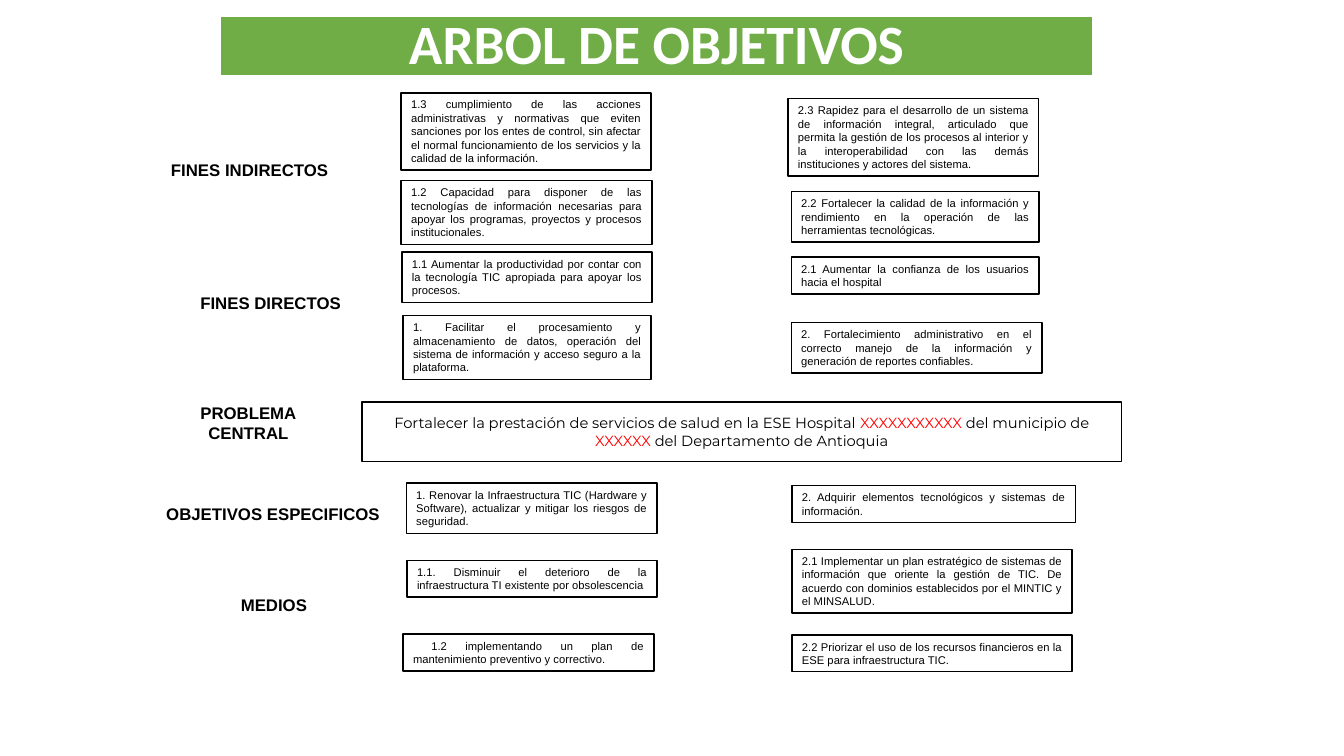
from dataclasses import dataclass

from pptx import Presentation
from pptx.dml.color import RGBColor
from pptx.enum.shapes import MSO_SHAPE
from pptx.enum.text import MSO_ANCHOR, MSO_AUTO_SIZE, PP_ALIGN
from pptx.shapes.autoshape import Shape
from pptx.slide import Slide
from pptx.util import Cm, Pt

COLORS = {"green": "70AD47", "white": "FFFFFF", "black": "000000", "red": "FF0000"}
TITLE_FONT = {"name": "Calibri", "size": Pt(39.6), "bold": True}
LABEL_FONT = {"name": "Arial", "size": Pt(12), "bold": True}
CARD_FONT = {"name": "Arial", "size": Pt(8), "bold": False}
CENTRAL_FONT = {"name": "Montserrat", "size": Pt(10.5), "bold": False}
LINE_HEIGHT = 0.34
VERTICAL_INSETS = 0.25


@dataclass(frozen=True)
class Label:
    left: float
    top: float
    width: float
    lines: tuple[str, ...]


@dataclass(frozen=True)
class Card:
    left: float
    top: float
    width: float
    line_count: int
    text: str
    first_indent: float = 0


LABELS = [
    Label(4.06, 3.91, 4.52, ("FINES INDIRECTOS",)),
    Label(4.8, 7.24, 4.22, ("FINES DIRECTOS",)),
    Label(4.8, 10.03, 3.07, ("PROBLEMA", "CENTRAL")),
    Label(3.94, 12.57, 5.97, ("OBJETIVOS ESPECIFICOS",)),
    Label(5.82, 14.86, 2.21, ("MEDIOS",)),
]

CARDS = [
    # Left branch
    Card(10.11, 2.34, 6.3, 5, "1.3 cumplimiento de las acciones administrativas y normativas que "
         "eviten sanciones por los entes de control, sin afectar el normal funcionamiento de los "
         "servicios y la calidad de la información."),
    Card(10.11, 4.55, 6.32, 4, "1.2 Capacidad para disponer de las tecnologías de información "
         "necesarias para apoyar los programas, proyectos y procesos institucionales."),
    Card(10.13, 6.35, 6.3, 3, "1.1 Aumentar la productividad por contar con la tecnología TIC "
         "apropiada para apoyar los procesos."),
    Card(10.16, 7.95, 6.25, 4, "1. Facilitar el procesamiento y almacenamiento de datos, operación "
         "del sistema de información y acceso seguro a la plataforma."),
    Card(10.24, 12.17, 6.32, 3, "1. Renovar la Infraestructura TIC (Hardware y Software), "
         "actualizar y mitigar los riesgos de seguridad."),
    Card(10.26, 14.12, 6.3, 2, "1.1. Disminuir el deterioro de la infraestructura TI existente "
         "por obsolescencia"),
    Card(10.16, 15.98, 6.32, 2, "1.2 implementando un plan de mantenimiento preventivo y "
         "correctivo.", first_indent=0.46),
    # Right branch
    Card(19.86, 2.49, 6.32, 5, "2.3 Rapidez para el desarrollo de un sistema de información "
         "integral, articulado que permita la gestión de los procesos al interior y la "
         "interoperabilidad con las demás instituciones y actores del sistema."),
    Card(19.94, 4.83, 6.25, 3, "2.2 Fortalecer la calidad de la información y rendimiento en la "
         "operación de las herramientas tecnológicas."),
    Card(19.94, 6.48, 6.25, 2, "2.1 Aumentar la confianza de los usuarios hacia el hospital"),
    Card(19.94, 8.13, 6.32, 3, "2. Fortalecimiento administrativo en el correcto manejo de la "
         "información y generación de reportes confiables."),
    Card(19.96, 12.24, 7.14, 2, "2. Adquirir elementos tecnológicos y sistemas de información."),
    Card(19.96, 13.84, 7.06, 4, "2.1 Implementar un plan estratégico de sistemas de información "
         "que oriente la gestión de TIC. De acuerdo con dominios establecidos por el MINTIC y el "
         "MINSALUD."),
    Card(19.96, 16, 7.06, 2, "2.2 Priorizar el uso de los recursos financieros en la ESE para "
         "infraestructura TIC."),
]

CENTRAL_RUNS = [
    ("Fortalecer la prestación de servicios de salud en la ESE Hospital ", "black"),
    ("XXXXXXXXXXX", "red"),
    (" del municipio de ", "black"),
    ("XXXXXX", "red"),
    (" del Departamento de Antioquia", "black"),
]


def rgb(color: str) -> RGBColor:
    return RGBColor.from_string(COLORS[color])


def add_run(paragraph, text: str, font_format: dict, color: str) -> None:
    run = paragraph.add_run()
    run.text = text
    for attribute, value in font_format.items():
        setattr(run.font, attribute, value)
    run.font.color.rgb = rgb(color)


def add_box(slide: Slide, left: float, top: float, width: float, height: float,
            fill: str = "white", line: str = "black", line_width: float = 1) -> Shape:
    shape = slide.shapes.add_shape(
        MSO_SHAPE.RECTANGLE, Cm(left), Cm(top), Cm(width), Cm(height))
    shape.shadow.inherit = False
    shape.fill.solid()
    shape.fill.fore_color.rgb = rgb(fill)
    shape.line.color.rgb = rgb(line)
    shape.line.width = Pt(line_width)
    shape.text_frame.word_wrap = True
    shape.text_frame.vertical_anchor = MSO_ANCHOR.MIDDLE
    shape.text_frame.paragraphs[0].alignment = PP_ALIGN.CENTER
    return shape


def add_title(slide: Slide) -> None:
    shape = add_box(slide, 5.54, 0.41, 22.02, 1.52, "green", "white", 1.5)
    paragraph = shape.text_frame.paragraphs[0]
    paragraph.line_spacing = 0.9
    add_run(paragraph, "ARBOL DE OBJETIVOS", TITLE_FONT, "white")


def add_central_problem(slide: Slide) -> None:
    shape = add_box(slide, 9.12, 10.13, 19.15, 1.5)
    for text, color in CENTRAL_RUNS:
        add_run(shape.text_frame.paragraphs[0], text, CENTRAL_FONT, color)


def add_label(slide: Slide, label: Label) -> None:
    height = 0.25 + 0.51 * len(label.lines)
    shape = slide.shapes.add_textbox(
        Cm(label.left), Cm(label.top), Cm(label.width), Cm(height))
    frame = shape.text_frame
    frame.word_wrap = False
    frame.auto_size = MSO_AUTO_SIZE.SHAPE_TO_FIT_TEXT
    for index, text in enumerate(label.lines):
        paragraph = frame.add_paragraph() if index else frame.paragraphs[0]
        paragraph.alignment = PP_ALIGN.CENTER if index else PP_ALIGN.LEFT
        add_run(paragraph, text, LABEL_FONT, "black")


def add_card(slide: Slide, card: Card) -> None:
    height = VERTICAL_INSETS + LINE_HEIGHT * card.line_count
    shape = add_box(slide, card.left, card.top, card.width, height)
    frame = shape.text_frame
    frame.vertical_anchor = MSO_ANCHOR.TOP
    frame.auto_size = MSO_AUTO_SIZE.SHAPE_TO_FIT_TEXT
    paragraph = frame.paragraphs[0]
    paragraph.alignment = PP_ALIGN.JUSTIFY
    if card.first_indent:
        paragraph._p.get_or_add_pPr().set("indent", str(Cm(card.first_indent)))
    add_run(paragraph, card.text, CARD_FONT, "black")


def main() -> None:
    presentation = Presentation()
    presentation.slide_width = Cm(33.87)
    presentation.slide_height = Cm(19.05)
    slide = presentation.slides.add_slide(presentation.slide_layouts[6])

    # Heading and central problem
    add_title(slide)
    add_central_problem(slide)

    # Level names and tree cards
    for label in LABELS:
        add_label(slide, label)
    for card in CARDS:
        add_card(slide, card)

    presentation.save("out.pptx")


if __name__ == "__main__":
    main()
